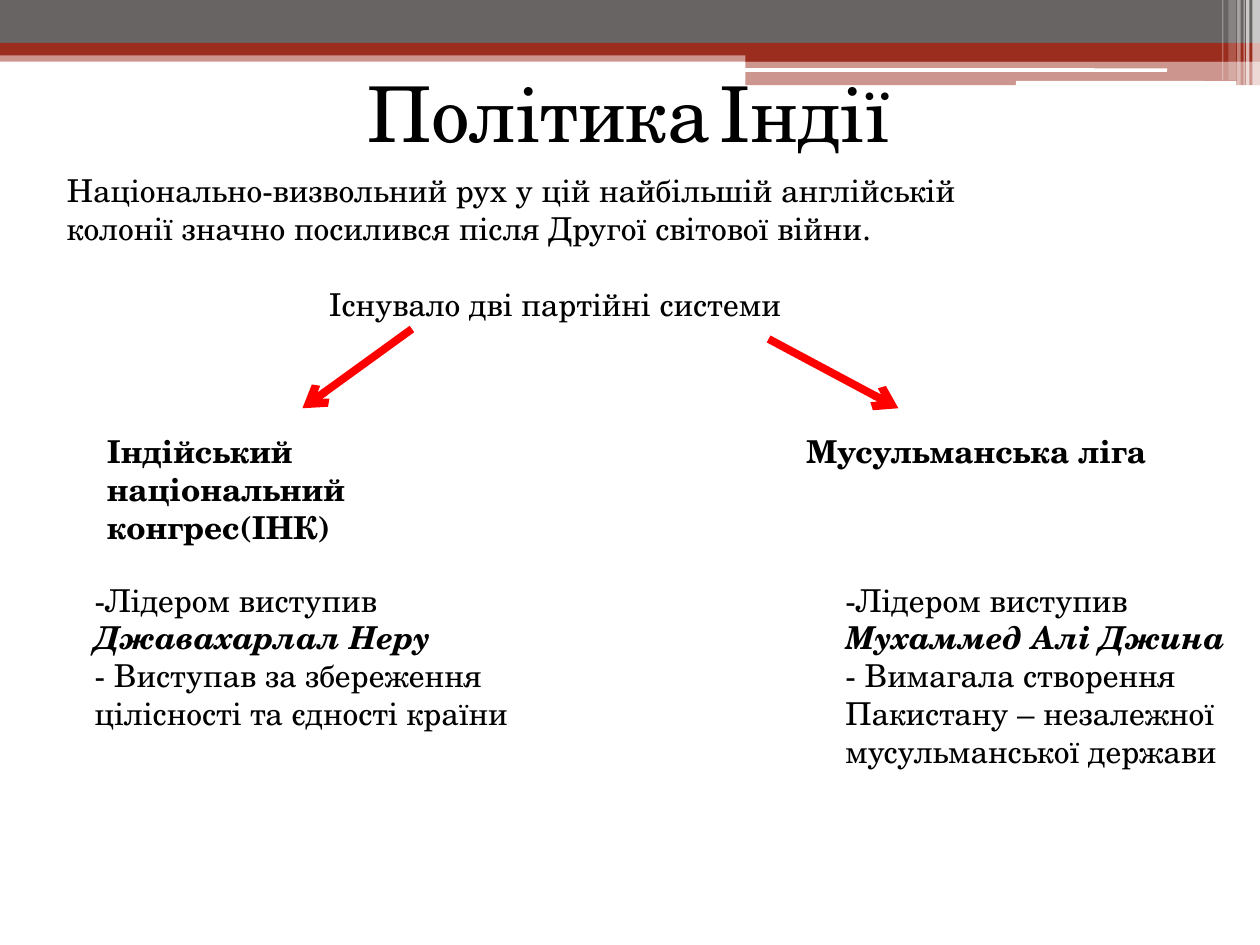
from lxml.etree import SubElement as Sub
from pptx import Presentation
from pptx.dml.color import RGBColor as Color
from pptx.enum.shapes import MSO_CONNECTOR as Link, MSO_SHAPE as Kind
from pptx.enum.text import MSO_ANCHOR as Anchor, MSO_AUTO_SIZE as Fit, PP_ALIGN as Align
from pptx.oxml.ns import qn
from pptx.util import Pt

HUES = {"red": "9B2D1F", "gray": "696464", "white": "FFFFFF",
        "arrow": "FF0000", "text": "000000"}
FACE = "TeX Gyre Schola"

# left, top, width, height, colour, opacity in percent
BANDS = [
    (0, 28.8, 720, 6.5, "red", 50),
    (0, 0, 720, 24.5, "gray", 100),
    (0, 24.5, 720, 7.2, "red", 100),
    (426, 28, 294, 7.2, "red", 100),
    (426, 34.5, 294, 14.2, "red", 50),
]
PILLS = [(425.5, 39, 241.5, 2), (580.5, 46.3, 126, 2.7)]
# left, width, height, opacity in percent
STRIPES = [
    (715.7, 4.3, 49, 65), (712, 2, 49, 65), (710.6, 0.7, 49, 60),
    (707, 2, 49, 40), (702, 4.3, 46, 20), (698.4, 0.7, 46, 30),
]
BOLD = {"bold": True}
NAME = {"bold": True, "italic": True}


def hue(key):
    return Color.from_string(HUES[key])


def add_bar(slide, box, key, alpha=100, kind=Kind.RECTANGLE):
    bar = slide.shapes.add_shape(kind, *map(Pt, box))
    bar.shadow.inherit = False
    bar.fill.solid()
    bar.fill.fore_color.rgb = hue(key)
    bar.line.fill.background()
    if alpha < 100:
        tint = bar.element.find(".//" + qn("a:srgbClr"))
        Sub(tint, qn("a:alpha"), val=str(alpha * 1000))


def add_header(slide):
    for *box, key, alpha in BANDS:
        add_bar(slide, box, key, alpha)
    for box in PILLS:
        add_bar(slide, box, "white", kind=Kind.ROUNDED_RECTANGLE)
    for left, width, height, alpha in STRIPES:
        add_bar(slide, (left, 0, width, height), "white", alpha)


def place(shape, box):
    """Move a text shape to its box and bring it to the front."""
    for key, size in zip(("left", "top", "width", "height"), box):
        setattr(shape, key, Pt(size))
    frame = shape.text_frame
    form = {"word_wrap": True, "auto_size": Fit.NONE, "vertical_anchor": Anchor.TOP}
    for key, value in form.items():
        setattr(frame, key, value)
    tree = shape.element.getparent()
    tree.append(shape.element)
    return frame


def write(frame, paras):
    """Fill a frame from (runs, paragraph format) pairs."""
    for i, (runs, form) in enumerate(paras):
        para = frame.add_paragraph() if i else frame.paragraphs[0]
        form = {"alignment": Align.LEFT, "space_before": Pt(0)} | form
        for key, value in form.items():
            setattr(para, key, value)
        for text, style in runs:
            run = para.add_run()
            run.text = text
            style = {"name": FACE, "size": Pt(18)} | style
            for key, value in style.items():
                setattr(run.font, key, value)
            run.font.color.rgb = hue("text")


def drop_bullets(frame):
    for para in frame.paragraphs:
        props = para._p.get_or_add_pPr()
        props.set("marL", "0")
        props.set("indent", "0")
        Sub(props, qn("a:buNone"))


def add_text(slide, box, paras):
    shape = slide.shapes.add_textbox(*map(Pt, box))
    write(place(shape, box), paras)


def add_arrow(slide, start, end):
    arrow = slide.shapes.add_connector(Link.STRAIGHT, *map(Pt, start + end))
    arrow.line.color.rgb = hue("arrow")
    arrow.line.width = Pt(4.5)
    Sub(arrow.line._get_or_add_ln(), qn("a:tailEnd"), type="arrow")
    Sub(arrow.element.spPr, qn("a:effectLst"))


def add_party(slide, head, head_box, align, leader, aim, box):
    add_text(slide, head_box, [([(head, BOLD)], {"alignment": align})])
    add_text(slide, box, [
        ([("-Лідером виступив ", {}), (leader, NAME)], {}),
        ([(aim, {})], {}),
    ])


def main():
    deck = Presentation()
    deck.slide_width, deck.slide_height = Pt(720), Pt(540)
    slide = deck.slides.add_slide(deck.slide_layouts[1])
    add_header(slide)

    add_party(slide, "Індійський національний конгрес(ІНК)",
              (54, 243.4, 238, 51), Align.LEFT, "Джавахарлал Неру",
              "- Виступав за збереження цілісності та єдності країни",
              (47, 328.3, 272, 160))
    add_party(slide, "Мусульманська ліга",
              (430.5, 243.4, 255, 29), Align.CENTER, "Мухаммед Алі Джина",
              "- Вимагала створення Пакистану – незалежної мусульманської держави",
              (476, 328.3, 244, 117))

    big = {"size": Pt(44)}
    title = place(slide.shapes.title, (180.7, 34, 357, 60.5))
    write(title, [([("Політика", big), (" ", {}), ("Індії", big)],
                   {"alignment": Align.CENTER})])

    intro = place(slide.placeholders[1], (31, 94.3, 572.4, 117))
    write(intro, [
        ([("Національно-визвольний рух у цій найбільшій англійській колонії "
           "значно посилився після Другої світової війни.", {})], {}),
        ([("Існувало дві партійні системи", {})],
         {"alignment": Align.CENTER, "space_before": Pt(21.6)}),
    ])
    drop_bullets(intro)

    add_arrow(slide, (235.4, 188), (172.8, 233.3))
    add_arrow(slide, (439.2, 193.7), (513.4, 233.3))
    deck.save("out.pptx")


if __name__ == "__main__":
    main()
